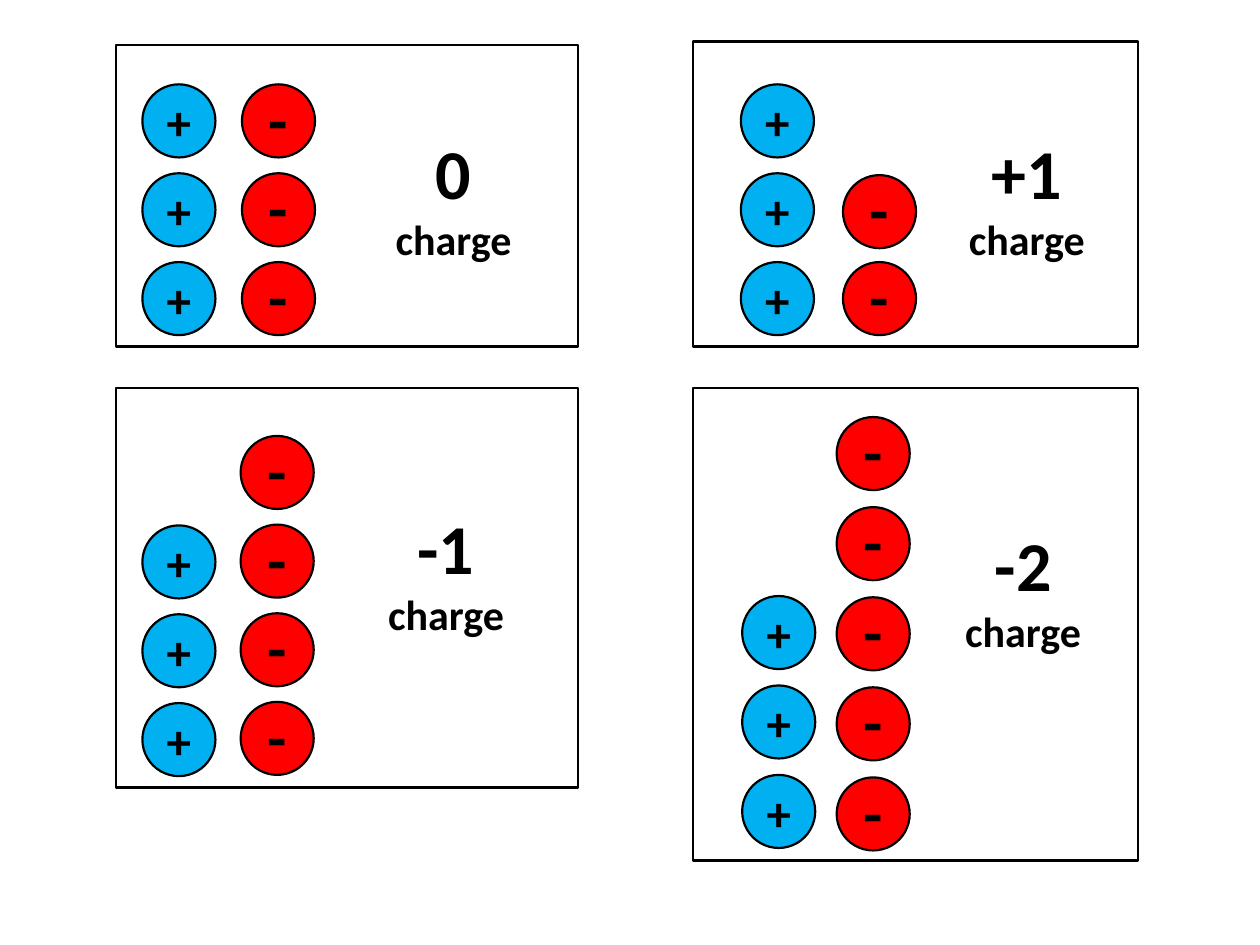
"""Build a slide of four boxes that pair positive and negative particles with their net charge."""
import pptx
import pptx.dml.color
import pptx.enum.shapes
import pptx.enum.text
import pptx.util

BLACK = pptx.dml.color.RGBColor(0x00, 0x00, 0x00)
WHITE = pptx.dml.color.RGBColor(0xFF, 0xFF, 0xFF)
BLUE = pptx.dml.color.RGBColor(0x00, 0xB0, 0xF0)
RED = pptx.dml.color.RGBColor(0xFF, 0x00, 0x00)

SLIDE_WIDTH = pptx.util.Inches(10)
SLIDE_HEIGHT = pptx.util.Inches(7.5)
PARTICLE_SIZE = (5.8, 7.73)
CAPTION_SIZE = (15, 15.47)
RECTANGLE = pptx.enum.shapes.MSO_SHAPE.RECTANGLE
OVAL = pptx.enum.shapes.MSO_SHAPE.OVAL

POSITIVE = {"sign": "+", "size": 28, "fill": BLUE, "inset": 0.05}
NEGATIVE = {"sign": "-", "size": 36, "fill": RED, "inset": 0}

# Positions and sizes are percentages of the slide; a column is (left, first top, last top, count).
PANELS = [
    {"frame": (9.2, 4.8, 36.7, 31.87), "charge": "0 ", "caption": (28.5, 13.07),
     "positives": (11.3, 8.93, 27.73, 3), "negatives": (19.2, 8.93, 27.73, 3)},
    {"frame": (55, 4.4, 35.3, 32.27), "charge": "+1 ", "caption": (74, 13.07),
     "positives": (58.8, 8.93, 27.73, 3), "negatives": (66.9, 18.53, 27.73, 2)},
    {"frame": (9.2, 41.07, 36.7, 42.27), "charge": "-1 ", "caption": (27.9, 52.8),
     "positives": (11.3, 55.6, 74.4, 3), "negatives": (19.1, 46.13, 74.27, 4)},
    {"frame": (55, 41.07, 35.3, 50), "charge": "-2 ", "caption": (73.7, 54.53),
     "positives": (58.9, 63.07, 82, 3), "negatives": (66.4, 44.13, 82.27, 5)},
]


def place(left, top, width, height):
    """Turn percentages of the slide into lengths."""
    return (int(SLIDE_WIDTH * left / 100), int(SLIDE_HEIGHT * top / 100),
            int(SLIDE_WIDTH * width / 100), int(SLIDE_HEIGHT * height / 100))


def add_text(box, *pieces, inset=0.05, color=BLACK, font="Calibri", bold=True):
    """Write (text, size) pieces as one centred paragraph."""
    frame = box.text_frame
    frame.word_wrap = True
    frame.vertical_anchor = pptx.enum.text.MSO_ANCHOR.MIDDLE
    frame.margin_top = pptx.util.Inches(inset)
    para = frame.paragraphs[0]
    para.alignment = pptx.enum.text.PP_ALIGN.CENTER
    for text, size in pieces:
        span = para.add_run()
        span.text = text
        span.font.name = font
        span.font.size = pptx.util.Pt(size)
        span.font.bold = bold
        span.font.color.rgb = color


def add_outlined(page, kind, area, fill):
    """Add a filled shape with a thin black outline."""
    shape = page.shapes.add_shape(kind, *place(*area))
    shape.shadow.inherit = False
    shape.fill.solid()
    shape.fill.fore_color.rgb = fill
    shape.line.color.rgb = BLACK
    shape.line.width = pptx.util.Pt(1.25)
    return shape


def add_particles(page, column, style):
    """Stack evenly spaced particles between the first and last top."""
    left, first, last, count = column
    step = (last - first) / (count - 1)
    for row in range(count):
        area = (left, first + row * step, *PARTICLE_SIZE)
        particle = add_outlined(page, OVAL, area, style["fill"])
        add_text(particle, (style["sign"], style["size"]), inset=style["inset"])


def add_panel(page, panel):
    """Add one frame with its particles and its charge."""
    add_outlined(page, RECTANGLE, panel["frame"], WHITE)
    add_particles(page, panel["positives"], POSITIVE)
    add_particles(page, panel["negatives"], NEGATIVE)
    caption = page.shapes.add_textbox(*place(*panel["caption"], *CAPTION_SIZE))
    add_text(caption, (panel["charge"], 40), ("charge", 24))


def main():
    """Build and save the deck."""
    deck = pptx.Presentation()
    deck.slide_width = SLIDE_WIDTH
    deck.slide_height = SLIDE_HEIGHT
    page = deck.slides.add_slide(deck.slide_layouts[6])
    for panel in PANELS:
        add_panel(page, panel)
    deck.save("out.pptx")


if __name__ == "__main__":
    main()
